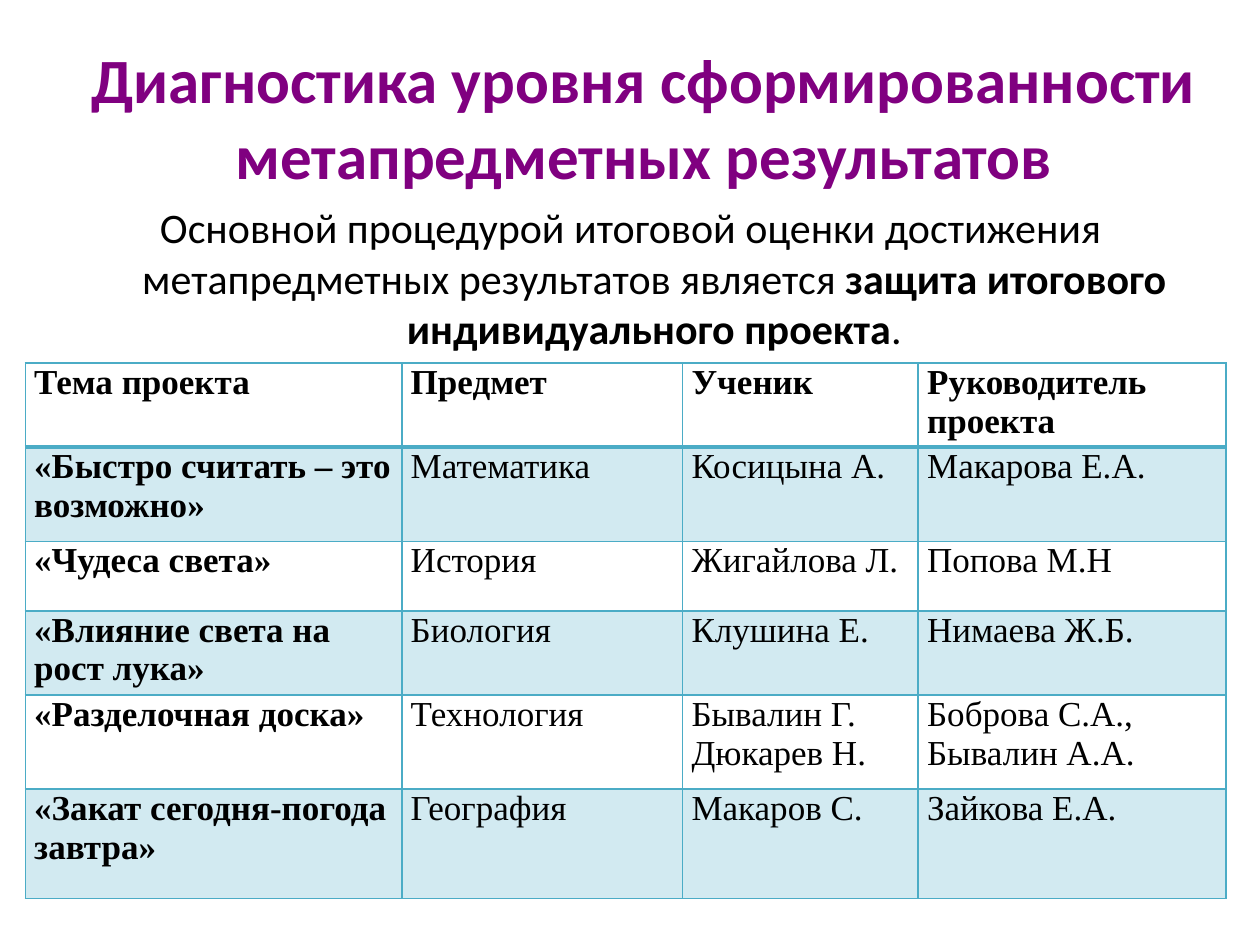
from dataclasses import dataclass

from pptx import Presentation
from pptx.dml.color import RGBColor
from pptx.enum.text import MSO_ANCHOR, PP_ALIGN
from pptx.oxml.ns import qn
from pptx.util import Cm, Pt
from lxml import etree

CENTER, LEFT = PP_ALIGN.CENTER, PP_ALIGN.LEFT
TOP, MIDDLE = MSO_ANCHOR.TOP, MSO_ANCHOR.MIDDLE


@dataclass(frozen=True)
class Theme:
    purple: str = "800080"
    black: str = "000000"
    teal: str = "4BACC6"
    band: str = "D2EAF1"
    heading_font: str = "Calibri"
    table_font: str = "Times New Roman"
    title_size: int = 36
    body_size: int = 24
    table_size: int = 20
    thin: float = 1
    thick: float = 2.25


def write(frame, paragraphs, *, font, size, color, align=LEFT):
    """Fill a text frame; each paragraph is a list of (text, bold) runs."""
    for index, runs in enumerate(paragraphs):
        paragraph = frame.paragraphs[0] if index == 0 else frame.add_paragraph()
        paragraph.alignment = align
        for words, bold in runs:
            run = paragraph.add_run()
            run.text = words
            run.font.name = font
            run.font.size = Pt(size)
            run.font.bold = bold
            run.font.color.rgb = RGBColor.from_string(color)


class SlideBuilder:
    def __init__(self, slide, theme):
        self.slide = slide
        self.theme = theme

    def text(self, box, paragraphs, anchor=TOP, hanging=0, **style):
        frame = self.slide.shapes.add_textbox(*map(Cm, box)).text_frame
        frame.word_wrap = True
        frame.vertical_anchor = anchor
        write(frame, paragraphs, font=self.theme.heading_font, align=CENTER, **style)
        if hanging:
            for paragraph in frame.paragraphs:
                properties = paragraph._p.get_or_add_pPr()
                properties.set("marL", str(Cm(hanging)))
                properties.set("indent", str(-Cm(hanging)))

    def borders(self, cell, top, bottom):
        properties = cell._tc.get_or_add_tcPr()
        thin = self.theme.thin
        sides = {"lnL": thin, "lnR": thin, "lnT": top, "lnB": bottom}
        for position, (side, width) in enumerate(sides.items()):
            line = etree.Element(qn(f"a:{side}"), w=str(Pt(width)))
            fill = etree.SubElement(line, qn("a:solidFill"))
            etree.SubElement(fill, qn("a:srgbClr"), val=self.theme.teal)
            properties.insert(position, line)

    def table(self, box, widths, heights, rows):
        theme = self.theme
        holder = self.slide.shapes.add_table(len(rows), len(widths), *map(Cm, box))
        table = holder.table
        table.first_row = table.horz_banding = False
        for column, width in zip(table.columns, widths):
            column.width = Cm(width)
        for row, height in zip(table.rows, heights):
            row.height = Cm(height)
        holder.height = Cm(box[3])
        for r, row in enumerate(rows):
            for c, content in enumerate(row):
                cell = table.cell(r, c)
                cell.margin_left = cell.margin_right = Cm(0.18)
                cell.margin_top = cell.margin_bottom = 0
                if r % 2:
                    cell.fill.solid()
                    cell.fill.fore_color.rgb = RGBColor.from_string(theme.band)
                else:
                    cell.fill.background()
                # The heavy rule separates the header from the projects
                self.borders(cell, top=theme.thick if r == 1 else theme.thin,
                             bottom=theme.thick if r == 0 else theme.thin)
                bold = r == 0 or c == 0
                write(cell.text_frame, [[(line, bold)] for line in content.split("\n")],
                      font=theme.table_font, size=theme.table_size, color=theme.black)


PROJECTS = [
    ("Тема проекта", "Предмет", "Ученик", "Руководитель проекта"),
    ("«Быстро считать – это возможно»", "Математика", "Косицына А.", "Макарова Е.А."),
    ("«Чудеса света»", "История", "Жигайлова Л.", "Попова М.Н"),
    ("«Влияние света на рост лука»", "Биология", "Клушина Е.", "Нимаева Ж.Б."),
    ("«Разделочная доска»", "Технология", "Бывалин Г.\nДюкарев Н.",
     "Боброва С.А., Бывалин А.А."),
    ("«Закат сегодня-погода завтра»", "География", "Макаров С.", "Зайкова Е.А."),
]


def main():
    theme = Theme()
    deck = Presentation()
    deck.slide_width, deck.slide_height = Cm(25.4), Cm(19.05)
    builder = SlideBuilder(deck.slides.add_slide(deck.slide_layouts[6]), theme)

    # Title
    builder.text(
        (1.27, 0.76, 23.42, 3.18),
        [[("Диагностика уровня сформированности метапредметных результатов", True)]],
        anchor=MIDDLE, size=theme.title_size, color=theme.purple)

    # Assessment procedure
    builder.text(
        (0.51, 3.94, 24.41, 2.79),
        [[("Основной процедурой итоговой оценки достижения метапредметных "
           "результатов является ", False),
          ("защита итогового индивидуального проекта", True),
          (".", False)]],
        hanging=0.95, size=theme.body_size, color=theme.black)

    # Projects
    builder.table((0.51, 7.32, 24.21, 10.8), widths=(7.59, 5.66, 4.75, 6.2),
                  heights=(1.27, 1.9, 1.4, 1.27, 1.9, 2.2), rows=PROJECTS)

    deck.save("out.pptx")


if __name__ == "__main__":
    main()
